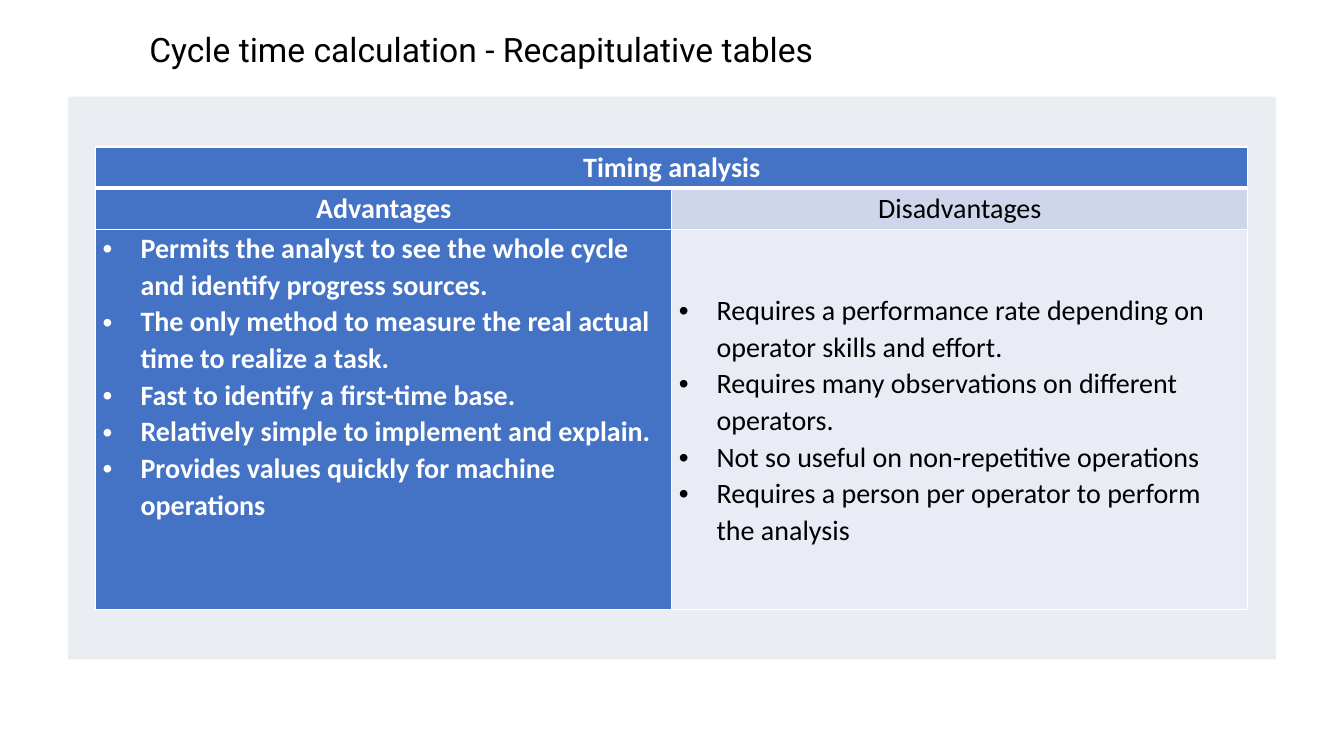
from lxml import etree
from pptx import Presentation
from pptx.dml.color import RGBColor
from pptx.enum import shapes, text
from pptx.oxml import ns
from pptx.util import Pt

WHITE = RGBColor(0xFF, 0xFF, 0xFF)
BLACK = RGBColor(0x00, 0x00, 0x00)
PANEL = RGBColor(0xD6, 0xDC, 0xE5)
BLUE = RGBColor(0x44, 0x72, 0xC4)
LAVENDER = RGBColor(0xCF, 0xD5, 0xEA)
PALE = RGBColor(0xE9, 0xEB, 0xF5)

ADVANTAGES = [
    "Permits the analyst to see the whole cycle and identify progress sources.",
    "The only method to measure the real actual time to realize a task.",
    "Fast to identify a first-time base.",
    "Relatively simple to implement and explain.",
    "Provides values quickly for machine operations",
]
DISADVANTAGES = [
    "Requires a performance rate depending on operator skills and effort.",
    "Requires many observations on different operators.",
    "Not so useful on non-repetitive operations",
    "Requires a person per operator to perform the analysis",
]


def add_element(parent, tag, **attributes):
    return etree.SubElement(parent, ns.qn(tag), attributes)


class SlideBuilder:
    title_font = "Roboto"
    body_font = "Calibri"
    title_size = Pt(24)
    body_size = Pt(20)
    bullet_indent = Pt(27)

    def __init__(self, presentation):
        self.slide = presentation.slides.add_slide(presentation.slide_layouts[5])

    def style_runs(self, paragraph, font, size, color, bold=False):
        for run in paragraph.runs:
            run.font.name = font
            run.font.size = size
            run.font.bold = bold
            run.font.color.rgb = color

    def title(self, wording, left, top, width, height):
        title = self.slide.shapes.title
        title.left, title.top, title.width, title.height = left, top, width, height
        frame = title.text_frame
        frame.text = wording
        frame.word_wrap = True
        frame.auto_size = text.MSO_AUTO_SIZE.NONE
        frame.vertical_anchor = text.MSO_ANCHOR.MIDDLE
        paragraph = frame.paragraphs[0]
        paragraph.alignment = text.PP_ALIGN.LEFT
        paragraph.line_spacing = 0.9
        self.style_runs(paragraph, self.title_font, self.title_size, BLACK)

    def panel(self, left, top, width, height, color, opacity):
        panel = self.slide.shapes.add_shape(
            shapes.MSO_SHAPE.RECTANGLE, left, top, width, height)
        panel.shadow.inherit = False
        panel.line.fill.background()
        panel.fill.solid()
        panel.fill.fore_color.rgb = color
        color_element = panel.fill._xPr.find(".//" + ns.qn("a:srgbClr"))
        add_element(color_element, "a:alpha", val=str(opacity * 1000))

    def table(self, left, top, column_widths, row_heights):
        table = self.slide.shapes.add_table(
            len(row_heights), len(column_widths), left, top,
            sum(column_widths), sum(row_heights)).table
        for column, width in zip(table.columns, column_widths):
            column.width = width
        for row, height in zip(table.rows, row_heights):
            row.height = height
        return table

    def borders(self, cell, top=Pt(1), bottom=Pt(1)):
        properties = cell._tc.get_or_add_tcPr()
        for side, width in (("L", Pt(1)), ("R", Pt(1)), ("T", top), ("B", bottom)):
            line = add_element(properties, "a:ln" + side, w=str(width))
            fill = add_element(line, "a:solidFill")
            add_element(fill, "a:srgbClr", val=str(WHITE))

    def cell(self, cell, wording, fill, color, bold):
        cell.margin_left = cell.margin_right = Pt(5)
        cell.margin_top = cell.margin_bottom = 0
        cell.fill.solid()
        cell.fill.fore_color.rgb = fill
        cell.text_frame.text = wording
        for paragraph in cell.text_frame.paragraphs:
            self.style_runs(paragraph, self.body_font, self.body_size, color, bold)

    def heading_cell(self, cell, wording, fill, color, bold):
        self.cell(cell, wording, fill, color, bold)
        paragraph = cell.text_frame.paragraphs[0]
        paragraph.alignment = text.PP_ALIGN.CENTER
        paragraph.line_spacing = 1.1
        paragraph.space_after = Pt(6)

    def bullet_cell(self, cell, items, fill, color, bold):
        self.cell(cell, "\n".join(items), fill, color, bold)
        for paragraph in cell.text_frame.paragraphs:
            properties = paragraph._p.get_or_add_pPr()
            properties.set("marL", str(self.bullet_indent))
            properties.set("indent", str(-self.bullet_indent))
            add_element(properties, "a:buFont", typeface="Arial")
            add_element(properties, "a:buChar", char="•")
            paragraph.line_spacing = 1.07


def main():
    presentation = Presentation()
    presentation.slide_width = Pt(960)
    presentation.slide_height = Pt(540)
    builder = SlideBuilder(presentation)

    builder.panel(Pt(48.5), Pt(69), Pt(863), Pt(402), PANEL, opacity=50)
    builder.title("Cycle time calculation - Recapitulative tables",
                  Pt(99.5), Pt(20), Pt(795), Pt(34))

    table = builder.table(Pt(68.4), Pt(105), [Pt(411.5)] * 2,
                          [Pt(29.5), Pt(29.5), Pt(271.5)])
    for column in range(2):
        builder.borders(table.cell(0, column), bottom=Pt(3))
        builder.borders(table.cell(1, column), top=Pt(3))
        builder.borders(table.cell(2, column))

    table.cell(0, 0).merge(table.cell(0, 1))
    builder.heading_cell(table.cell(0, 0), "Timing analysis", BLUE, WHITE, True)
    builder.heading_cell(table.cell(1, 0), "Advantages", BLUE, WHITE, True)
    builder.heading_cell(table.cell(1, 1), "Disadvantages", LAVENDER, BLACK, False)
    builder.bullet_cell(table.cell(2, 0), ADVANTAGES, BLUE, WHITE, True)

    disadvantages = table.cell(2, 1)
    builder.bullet_cell(disadvantages, DISADVANTAGES, PALE, BLACK, False)
    disadvantages.vertical_anchor = text.MSO_ANCHOR.MIDDLE
    disadvantages.text_frame.paragraphs[-1].space_after = Pt(8)

    presentation.save("out.pptx")


if __name__ == "__main__":
    main()
